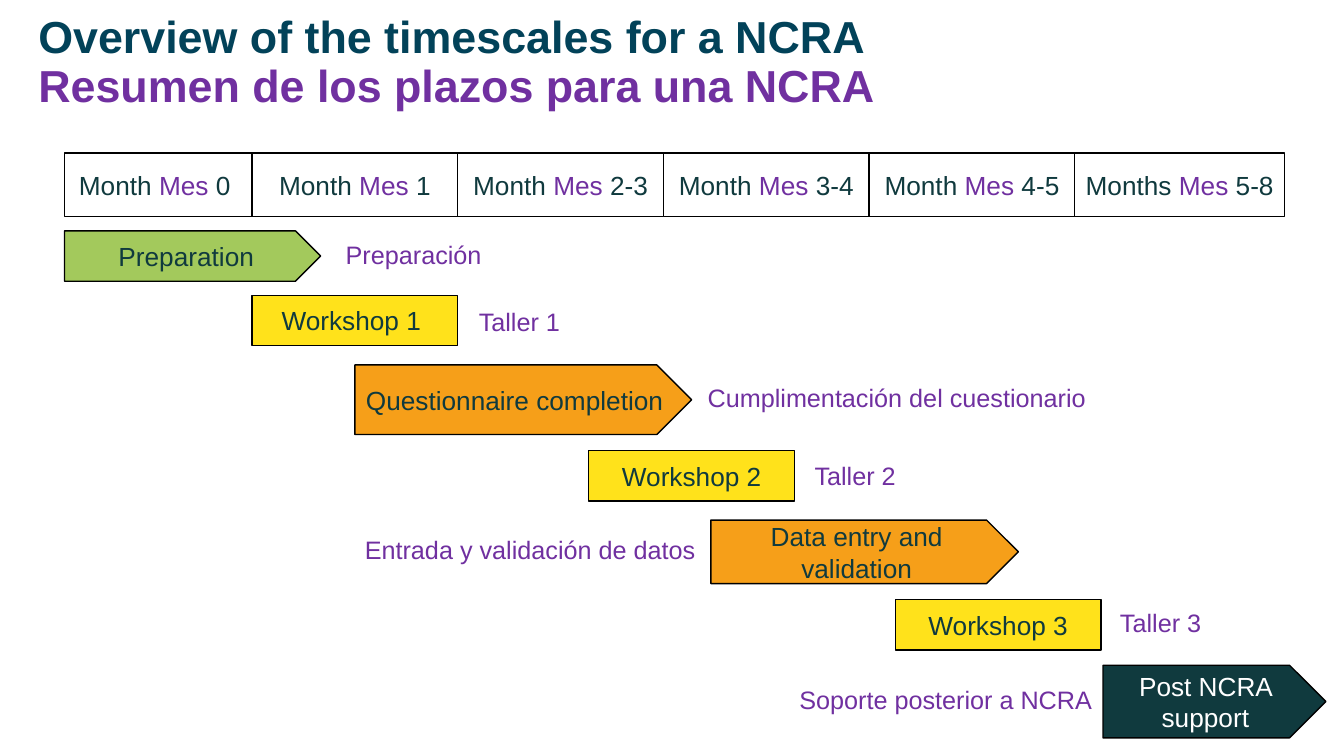
from pptx import Presentation
from pptx.dml.color import RGBColor
from pptx.enum import shapes, text
from pptx.util import Inches, Pt

COLORS = {
    "title": "024259", "spanish": "7030A0", "ink": "103A3E",
    "white": "FFFFFF", "black": "000000",
    "green": "A3C95C", "yellow": "FFE21B", "orange": "F69F19",
}
FONT = "Arial"
BOX = shapes.MSO_SHAPE.RECTANGLE
ARROW = shapes.MSO_SHAPE.PENTAGON

# Left edges of the month columns, closed by the right edge of the last one
MONTH_EDGES = [0.64, 2.5, 4.54, 6.58, 8.62, 10.66, 12.74]
MONTHS = [("Month ", " 0 "), ("Month ", " 1"), ("Month ", " 2-3"),
          ("Month ", " 3-4"), ("Month ", " 4-5"), ("Months ", " 5-8")]

# Outline, left, top, width, height, fill, text colour, English name
STAGES = [
    (ARROW, 0.64, 2.29, 2.54, 0.5, "green", "ink", "Preparation"),
    (BOX, 2.5, 2.93, 2.04, 0.5, "yellow", "ink", "Workshop 1 "),
    (ARROW, 3.52, 3.62, 3.34, 0.69, "orange", "ink", "Questionnaire completion"),
    (BOX, 5.84, 4.47, 2.04, 0.5, "yellow", "ink", "Workshop 2"),
    (ARROW, 7.05, 5.16, 3.05, 0.63, "orange", "ink", "Data entry and validation"),
    (BOX, 8.88, 5.95, 2.04, 0.5, "yellow", "ink", "Workshop 3"),
    (ARROW, 10.94, 6.6, 2.21, 0.72, "black_green", "white", "Post NCRA support"),
]
COLORS["black_green"] = COLORS["ink"]

# Left, top, width, Spanish name
TRANSLATIONS = [
    (3.33, 2.33, 1.68, "Preparación"),
    (4.65, 2.99, 1.18, "Taller 1"),
    (6.92, 3.74, 4, "Cumplimentación del cuestionario"),
    (7.98, 4.52, 1.18, "Taller 2"),
    (3.52, 5.25, 3.53, "Entrada y validación de datos"),
    (11.01, 5.98, 1.18, "Taller 3"),
    (7.83, 6.74, 3.23, "Soporte posterior a NCRA"),
]


def rgb(name):
    return RGBColor.from_string(COLORS[name])


def add_run(paragraph, words, color, size, bold=False):
    run = paragraph.add_run()
    run.text = words
    run.font.name = FONT
    run.font.size = Pt(size)
    run.font.bold = bold
    run.font.color.rgb = rgb(color)


def add_block(slide, outline, left, top, width, height, fill, runs):
    block = slide.shapes.add_shape(
        outline, Inches(left), Inches(top), Inches(width), Inches(height))
    block.shadow.inherit = False
    block.fill.solid()
    block.fill.fore_color.rgb = rgb(fill)
    block.line.color.rgb = rgb("black")
    block.line.width = Pt(1)
    frame = block.text_frame
    frame.word_wrap = True
    frame.vertical_anchor = text.MSO_ANCHOR.MIDDLE
    paragraph = frame.paragraphs[0]
    paragraph.alignment = text.PP_ALIGN.CENTER
    for words, color in runs:
        add_run(paragraph, words, color, 18.7)


def add_label(slide, left, top, width, height):
    label = slide.shapes.add_textbox(
        Inches(left), Inches(top), Inches(width), Inches(height))
    label.text_frame.word_wrap = True
    return label.text_frame


def add_title(slide):
    frame = add_label(slide, 0.38, 0.05, 11.93, 1.16)
    frame.vertical_anchor = text.MSO_ANCHOR.MIDDLE
    frame.margin_left = frame.margin_right = 0
    frame.margin_top = frame.margin_bottom = 0
    heading = frame.paragraphs[0]
    heading.line_spacing = 0.9
    add_run(heading, "Overview of the timescales for a NCRA", "title", 32, True)
    heading.add_line_break()
    add_run(heading, "Resumen de los plazos para una NCRA", "spanish", 32, True)


def main():
    deck = Presentation()
    deck.slide_width, deck.slide_height = Inches(13.33), Inches(7.5)
    slide = deck.slides.add_slide(deck.slide_layouts[6])

    add_title(slide)

    # Month header
    for (month, number), left, right in zip(MONTHS, MONTH_EDGES, MONTH_EDGES[1:]):
        runs = [(month, "ink"), ("Mes", "spanish"), (number, "ink")]
        add_block(slide, BOX, left, 1.52, right - left, 0.63, "white", runs)

    # Stages in English
    for outline, left, top, width, height, fill, color, name in STAGES:
        add_block(slide, outline, left, top, width, height, fill, [(name, color)])

    # Stages in Spanish
    for left, top, width, name in TRANSLATIONS:
        frame = add_label(slide, left, top, width, 0.4)
        add_run(frame.paragraphs[0], name, "spanish", 18)

    deck.save("out.pptx")


if __name__ == "__main__":
    main()
